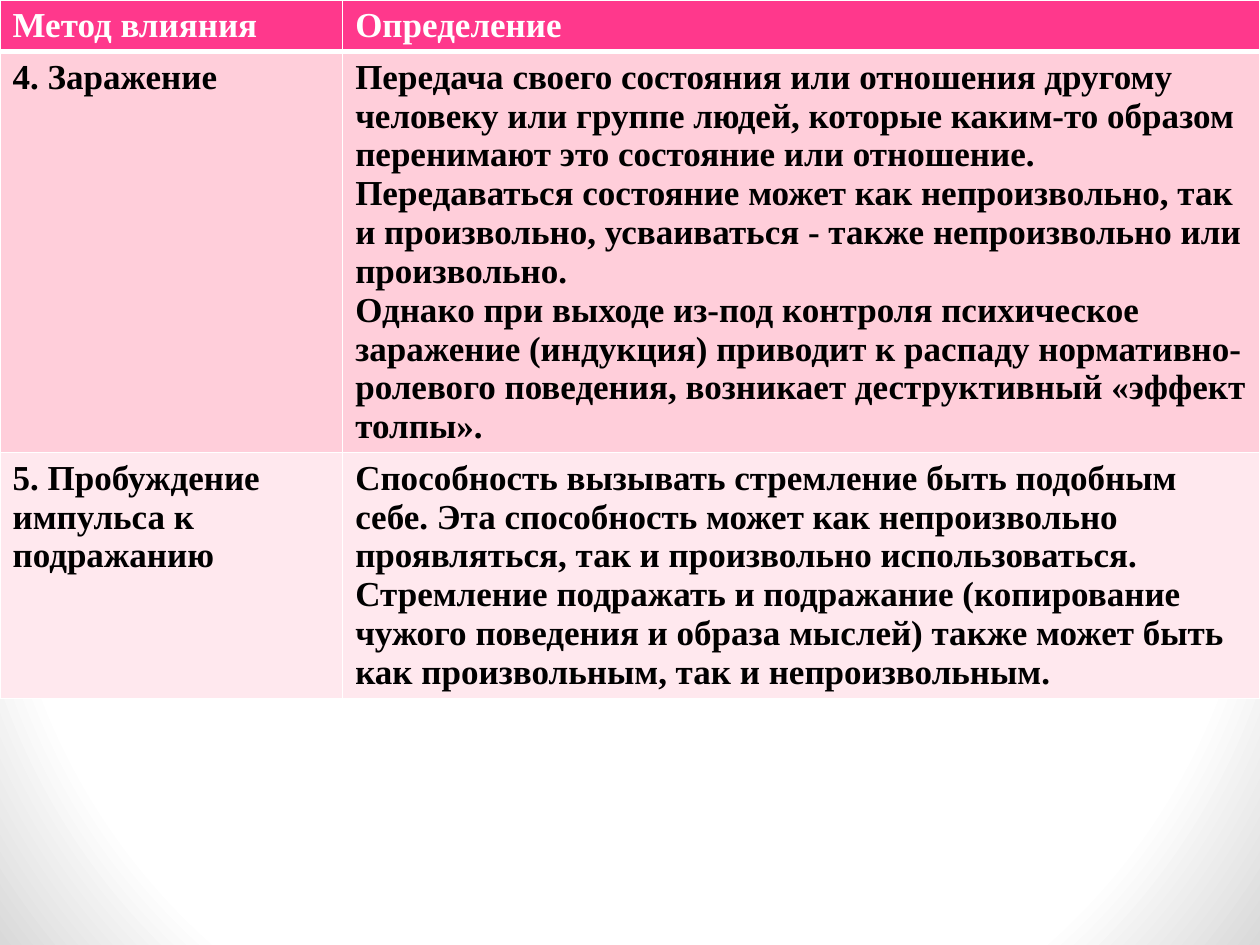
from lxml import etree
from pptx import Presentation, util as u
from pptx.dml.color import RGBColor
from pptx.enum import shapes
from pptx.oxml import parse_xml
from pptx.oxml.ns import nsdecls, qn

WHITE = RGBColor(0xFF, 0xFF, 0xFF)
BLACK = RGBColor(0, 0, 0)
GREY = RGBColor(0xD9, 0xD9, 0xD9)
HOT_PINK = RGBColor(0xFF, 0x38, 0x8C)
PINK = RGBColor(0xFF, 0xCE, 0xDA)
PALE_PINK = RGBColor(0xFF, 0xE8, 0xEE)

FONT = {"name": "Times New Roman", "size": u.Pt(20), "bold": True}
COLUMNS = [2.72, 7.28]
ROWS = [0.41, 3.18, 1.95]

# Each row: fill, text colour, then the paragraphs of each cell
CONTENT = [
    (HOT_PINK, WHITE, [["Метод влияния"], ["Определение"]]),
    (PINK, BLACK, [
        ["4. Заражение"],
        ["Передача своего состояния или отношения другому человеку или группе "
         "людей, которые каким-то образом перенимают это состояние или отношение. "
         "Передаваться состояние может как непроизвольно, так и произвольно, "
         "усваиваться - также непроизвольно или произвольно.",
         "Однако при выходе из-под контроля психическое заражение (индукция) "
         "приводит к распаду нормативно-ролевого поведения, возникает "
         "деструктивный «эффект толпы»."]]),
    (PALE_PINK, BLACK, [
        ["5. Пробуждение импульса к подражанию"],
        ["Способность вызывать стремление быть подобным себе. Эта способность "
         "может как непроизвольно проявляться, так и произвольно использоваться. "
         "Стремление подражать и подражание (копирование чужого поведения и "
         "образа мыслей) также может быть как произвольным, так и "
         "непроизвольным."]]),
]


def add_border(cell, position, side, points):
    """Draw one white edge; edges come before the fill in the cell properties."""
    line = etree.Element(qn(f"a:ln{side}"), w=str(u.Pt(points)))
    fill = etree.SubElement(line, qn("a:solidFill"))
    etree.SubElement(fill, qn("a:srgbClr"), val=str(WHITE))
    cell._tc.get_or_add_tcPr().insert(position, line)


deck = Presentation()
deck.slide_width, deck.slide_height = u.Inches(10), u.Inches(7.5)
page = deck.slides.add_slide(deck.slide_layouts[6])

# Backdrop: white centre shading to grey corners
backdrop = page.shapes.add_shape(
    shapes.MSO_SHAPE.RECTANGLE, 0, 0, deck.slide_width, deck.slide_height)
backdrop.shadow.inherit = False
backdrop.line.fill.background()
backdrop._element.spPr.find(qn("a:prstGeom")).addnext(parse_xml(
    f'<a:gradFill {nsdecls("a")} rotWithShape="1"><a:gsLst>'
    f'<a:gs pos="79000"><a:srgbClr val="{WHITE}"/></a:gs>'
    f'<a:gs pos="100000"><a:srgbClr val="{GREY}"/></a:gs></a:gsLst>'
    '<a:path path="circle">'
    '<a:fillToRect l="50000" t="50000" r="50000" b="50000"/>'
    '</a:path></a:gradFill>'))

# Table of methods
table = page.shapes.add_table(
    len(ROWS), len(COLUMNS), 0, 0, deck.slide_width, u.Inches(sum(ROWS))).table
for column, width in zip(table.columns, COLUMNS):
    column.width = u.Inches(width)
for row, height in zip(table.rows, ROWS):
    row.height = u.Inches(height)

for index, (row, (fill, colour, texts)) in enumerate(zip(table.rows, CONTENT)):
    for cell, paragraphs in zip(row.cells, texts):
        cell.fill.solid()
        cell.fill.fore_color.rgb = fill
        # The header is set off by a thicker line below it
        edges = {"L": 1, "R": 1, "T": 3 if index == 1 else 1,
                 "B": 3 if index == 0 else 1}
        for position, (side, points) in enumerate(edges.items()):
            add_border(cell, position, side, points)
        cell.text_frame.text = "\n".join(paragraphs)
        for para in cell.text_frame.paragraphs:
            for span in para.runs:
                for key, value in FONT.items():
                    setattr(span.font, key, value)
                span.font.color.rgb = colour

deck.save("out.pptx")
